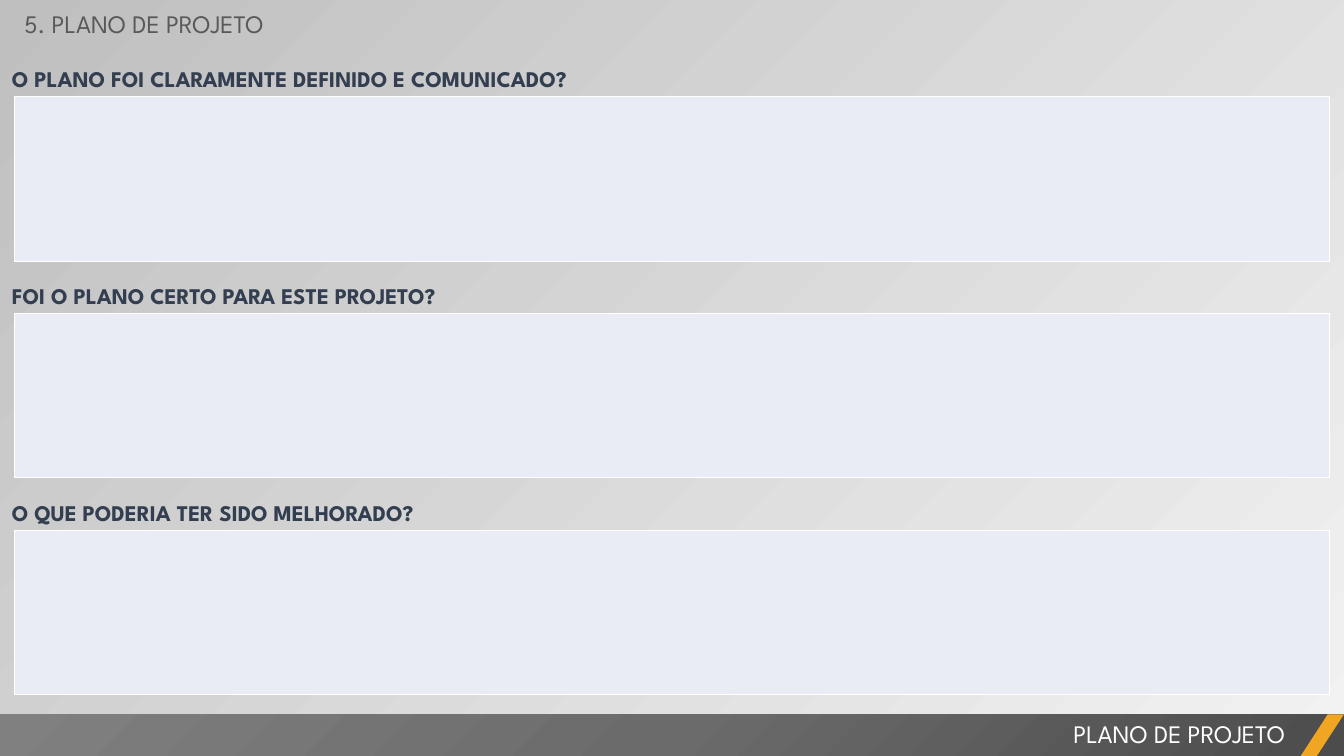
import pptx
import pptx.dml.color
import pptx.enum.shapes
import pptx.enum.text
import pptx.oxml
import pptx.oxml.ns
import pptx.util
from pptx.util import Cm

COLORS = {
    "light": "F2F2F2", "silver": "BFBFBF", "panel": "E9EBF5", "white": "FFFFFF",
    "question": "333F50", "title": "595959", "accent": "F0A622",
    "bar_dark": "4C4C4C", "bar_mid": "6B6B6B", "bar_light": "808080",
}
QUESTIONS = [
    "O PLANO FOI CLARAMENTE DEFINIDO E COMUNICADO?",
    "FOI O PLANO CERTO PARA ESTE PROJETO?",
    "O QUE PODERIA TER SIDO MELHORADO?",
]
NS = pptx.oxml.ns.nsdecls("a")
SHAPE = pptx.enum.shapes.MSO_SHAPE
ALIGN = pptx.enum.text.PP_ALIGN


def rgb(name):
    return pptx.dml.color.RGBColor.from_string(COLORS[name])


class SlideBuilder:
    font = "League Spartan"

    def __init__(self, prs):
        self.s = prs.slides.add_slide(prs.slide_layouts[5])

    def background(self, start, end, angle):
        fill = self.s.background.fill
        fill.gradient()
        fill.gradient_angle = angle
        for stop, name, position in zip(fill.gradient_stops, (start, end), (0, 1)):
            stop.color.rgb = rgb(name)
            stop.position = position

    def set_text(self, sp, text, size, color, bold=False, align=ALIGN.LEFT):
        tf = sp.text_frame
        tf.text = text
        tf.word_wrap = True
        tf.auto_size = pptx.enum.text.MSO_AUTO_SIZE.NONE
        tf.vertical_anchor = pptx.enum.text.MSO_ANCHOR.TOP
        p = tf.paragraphs[0]
        p.alignment = align
        font = p.runs[0].font
        font.name = self.font
        font.size = pptx.util.Pt(size)
        font.bold = bold
        font.color.rgb = rgb(color)
        return tf

    def title(self, text, left, top, width, height):
        sp = self.s.shapes.title
        sp.left, sp.top, sp.width, sp.height = Cm(left), Cm(top), Cm(width), Cm(height)
        self.set_text(sp, text, 18, "title")

    def text(self, text, left, top, width, height, size, color, **style):
        sp = self.s.shapes.add_textbox(Cm(left), Cm(top), Cm(width), Cm(height))
        return self.set_text(sp, text, size, color, **style)

    def question(self, text, top):
        tf = self.text(text, 0, top, 19.38, 1.02, 16, "question", bold=True)
        tf.margin_left = tf.margin_right = Cm(0.3)
        tf.margin_top = tf.margin_bottom = Cm(0.15)
        p = tf.paragraphs[0]
        p.line_spacing = pptx.util.Pt(21.5)
        p.space_before = pptx.util.Pt(3.2)

    def answer_table(self, left, top, width, height):
        frame = self.s.shapes.add_table(1, 1, Cm(left), Cm(top), Cm(width), Cm(height))
        table = frame.table
        table.first_row = table.horz_banding = False
        cell = table.cell(0, 0)
        tc_pr = cell._tc.get_or_add_tcPr()
        for side in "LRTB":
            tc_pr.append(pptx.oxml.parse_xml(
                f'<a:ln{side} {NS} w="12700"><a:solidFill>'
                f'<a:srgbClr val="{COLORS["white"]}"/></a:solidFill></a:ln{side}>'))
        cell.fill.solid()
        cell.fill.fore_color.rgb = rgb("panel")

    def shape(self, kind, left, top, width, height, color):
        sp = self.s.shapes.add_shape(kind, Cm(left), Cm(top), Cm(width), Cm(height))
        sp.shadow.inherit = False
        sp.line.fill.background()
        sp.fill.solid()
        sp.fill.fore_color.rgb = rgb(color)
        return sp

    def radial_fill(self, sp, names):
        step = 100000 // (len(names) - 1)
        stops = "".join(
            f'<a:gs pos="{i * step}"><a:srgbClr val="{COLORS[name]}"/></a:gs>'
            for i, name in enumerate(names))
        gradient = pptx.oxml.parse_xml(
            f'<a:gradFill {NS} rotWithShape="1"><a:gsLst>{stops}</a:gsLst>'
            '<a:path path="circle"><a:fillToRect l="100000" t="100000"/></a:path>'
            '</a:gradFill>')
        sp_pr = sp._element.spPr
        sp_pr.replace(sp_pr.find(pptx.oxml.ns.qn("a:solidFill")), gradient)


def main():
    prs = pptx.Presentation()
    prs.slide_width, prs.slide_height = Cm(33.87), Cm(19.05)
    slide = SlideBuilder(prs)
    slide.background("light", "silver", 135)
    slide.title("5. PLANO DE PROJETO", 0.36, 0.08, 13.49, 1.02)

    for i, question in enumerate(QUESTIONS):
        offset = i * 5.46
        slide.answer_table(0.36, 2.44 + offset, 33.15, 4.14)
        slide.question(question, 1.42 + offset)

    bar = slide.shape(SHAPE.RECTANGLE, 0, 18, 33.87, 1.05, "bar_dark")
    slide.radial_fill(bar, ["bar_dark", "bar_mid", "bar_light"])
    slide.text("PLANO DE PROJETO", 13.34, 17.98, 19.3, 1.02, 18, "white",
               align=ALIGN.RIGHT)
    stripe = slide.shape(SHAPE.PARALLELOGRAM, 32.78, 18, 1.09, 1.05, "accent")
    stripe.adjustments[0] = 0.65
    prs.save("out.pptx")


if __name__ == "__main__":
    main()
